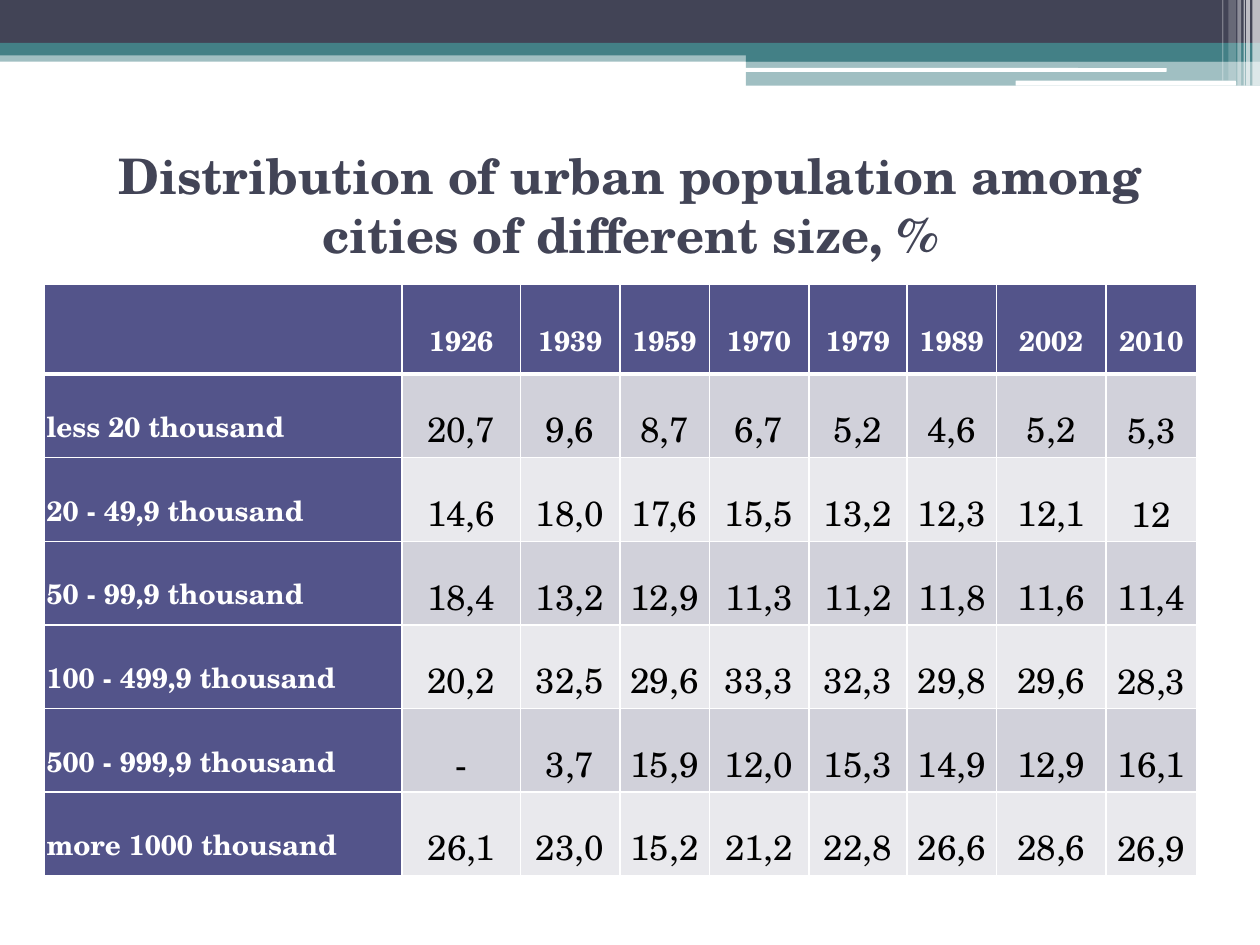
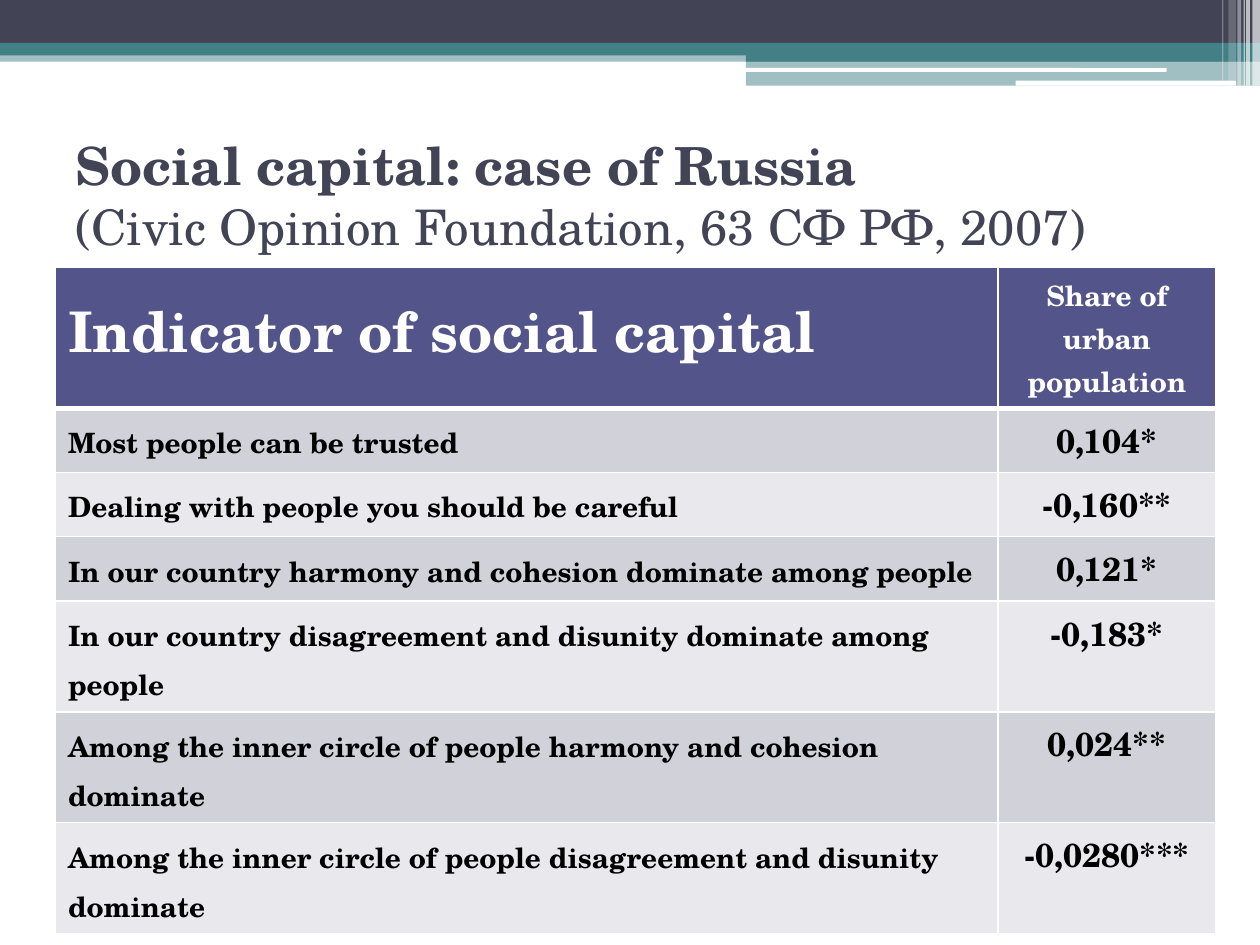
"""Builds two slides of tables on urban population and social capital."""
from dataclasses import dataclass
from typing import NamedTuple

from lxml.etree import SubElement
from pptx import Presentation
from pptx.dml.color import RGBColor
from pptx.enum.shapes import MSO_SHAPE as Shape
from pptx.enum.text import MSO_ANCHOR as Anchor, PP_ALIGN as Align
from pptx.oxml.ns import qn
from pptx.util import Inches, Pt


@dataclass(frozen=True)
class Theme:
    font: str = "TeX Gyre Schola"
    white: str = "FFFFFF"
    black: str = "000000"
    slate: str = "424456"
    teal: str = "438086"
    indigo: str = "53548A"
    stripes: tuple = ("D1D1DA", "E9E9ED")
    title: int = 28
    lead: int = 30
    heading: int = 32
    label: int = 16
    number: int = 20
    score: int = 19
    thin: int = 1
    thick: int = 3


T = Theme()


class Band(NamedTuple):
    left: float
    top: float
    width: float
    height: float
    color: str
    alpha: int = 100
    kind: Shape = Shape.RECTANGLE


class Span(NamedTuple):
    text: str
    size: int
    bold: bool = True


class CellStyle(NamedTuple):
    size: int
    color: str
    bold: bool = True
    align: Align = Align.LEFT
    anchor: Anchor = Anchor.TOP
    spacing: float = 1.0
    after: int = 0
    margins: tuple = (0.1, 0.05)


class TableSpec(NamedTuple):
    left: float
    top: float
    widths: list
    heights: list
    rows: list


BANDS = [
    Band(0, 0.4, 10, 0.09, T.teal, 50),
    Band(0, 0, 10, 0.34, T.slate),
    Band(0, 0.34, 10, 0.1, T.teal),
    Band(5.92, 0.39, 4.08, 0.1, T.teal),
    Band(5.92, 0.48, 4.08, 0.2, T.teal, 50),
    Band(5.91, 0.54, 3.35, 0.03, T.white, kind=Shape.ROUNDED_RECTANGLE),
    Band(8.06, 0.64, 1.75, 0.04, T.white, kind=Shape.ROUNDED_RECTANGLE),
    Band(9.94, 0, 0.06, 0.68, T.white, 65),
    Band(9.89, 0, 0.03, 0.68, T.white, 65),
    Band(9.87, 0, 0.01, 0.68, T.white, 60),
    Band(9.82, 0, 0.03, 0.68, T.white, 40),
    Band(9.75, 0, 0.06, 0.64, T.white, 20),
    Band(9.7, 0, 0.01, 0.64, T.white, 30),
]

CITY_LABEL = CellStyle(T.label, T.white, anchor=Anchor.MIDDLE, spacing=1.5, margins=(0.02, 0.02))
CITY_YEAR = CITY_LABEL._replace(align=Align.CENTER)
CITY_SHARE = CITY_YEAR._replace(size=T.number, color=T.black, bold=False)
CITY_LAST = CITY_SHARE._replace(anchor=Anchor.BOTTOM)
INDICATOR = CellStyle(T.label, T.black, spacing=1.15, after=6)
INDICATOR_HEAD = INDICATOR._replace(size=T.heading, color=T.white)
SCORE = CellStyle(T.score, T.black, align=Align.CENTER)
SCORE_HEAD = SCORE._replace(size=T.label, color=T.white)

CITIES = TableSpec(
    0.35, 2.26,
    [2.84, 0.94, 0.79, 0.71, 0.79, 0.78, 0.71, 0.87, 0.72],
    [0.71] + [(4.69 - 0.71) / 6] * 6,
    [
        ["", "1926", "1939", "1959", "1970", "1979", "1989", "2002", "2010"],
        ["less 20 thousand", "20,7", "9,6", "8,7", "6,7", "5,2", "4,6", "5,2", "5,3"],
        ["20 - 49,9 thousand", "14,6", "18,0", "17,6", "15,5", "13,2", "12,3", "12,1", "12"],
        ["50 - 99,9 thousand", "18,4", "13,2", "12,9", "11,3", "11,2", "11,8", "11,6", "11,4"],
        ["100 - 499,9 thousand", "20,2", "32,5", "29,6", "33,3", "32,3", "29,8", "29,6", "28,3"],
        ["500 - 999,9 thousand", "-", "3,7", "15,9", "12,0", "15,3", "14,9", "12,9", "16,1"],
        ["more 1000 thousand", "26,1", "23,0", "15,2", "21,2", "22,8", "26,6", "28,6", "26,9"],
    ],
)

CAPITAL = TableSpec(
    0.44, 2.12,
    [7.48, 1.73],
    [1.12] + [0.51] * 3 + [0.88] * 3,
    [
        ["Indicator of social capital", "Share of urban population"],
        ["Most people can be trusted", "0,104*"],
        ["Dealing with people you should be careful", "-0,160**"],
        ["In our country harmony and cohesion dominate among people", "0,121*"],
        ["In our country disagreement and disunity dominate among people", "-0,183*"],
        ["Among the inner circle of people harmony and cohesion dominate", "0,024**"],
        ["Among the inner circle of people disagreement and disunity dominate", "-0,0280***"],
    ],
)


def assign(target, values: dict) -> None:
    for name, value in values.items():
        setattr(target, name, value)


def set_font(r, size: int, color: str, bold: bool) -> None:
    assign(r.font, {"name": T.font, "size": Pt(size), "bold": bold})
    r.font.color.rgb = RGBColor.from_string(color)


def fill_solid(fill, color: str) -> None:
    fill.solid()
    fill.fore_color.rgb = RGBColor.from_string(color)


def draw_band(s, band: Band) -> None:
    sp = s.shapes.add_shape(band.kind, *map(Inches, band[:4]))
    sp.shadow.inherit = False
    sp.line.fill.background()
    fill_solid(sp.fill, band.color)
    if band.alpha < 100:
        color = sp._element.spPr.find(qn("a:solidFill"))[0]
        SubElement(color, qn("a:alpha"), val=str(band.alpha * 1000))


def draw_title(s, top: float, align: Align, lines: list[Span]) -> None:
    sp = s.shapes.add_textbox(Inches(0.5), Inches(top), Inches(9), Inches(1.1))
    tf = sp.text_frame
    assign(tf, {"word_wrap": True, "vertical_anchor": Anchor.MIDDLE})
    p = tf.paragraphs[0]
    p.alignment = align
    for i, span in enumerate(lines):
        if i:
            p.add_line_break()
        r = p.add_run()
        r.text = span.text
        set_font(r, span.size, T.slate, span.bold)


def set_borders(cell, top: int, bottom: int) -> None:
    tcPr = cell._tc.get_or_add_tcPr()
    widths = {"lnL": T.thin, "lnR": T.thin, "lnT": top, "lnB": bottom}
    for tag, width in widths.items():
        ln = SubElement(tcPr, qn(f"a:{tag}"), w=str(Pt(width)))
        SubElement(SubElement(ln, qn("a:solidFill")), qn("a:srgbClr"), val=T.white)


def write_cell(cell, text: str, style: CellStyle) -> None:
    side, edge = map(Inches, style.margins)
    assign(cell, {
        "margin_left": side, "margin_right": side,
        "margin_top": edge, "margin_bottom": edge,
        "vertical_anchor": style.anchor,
    })
    p = cell.text_frame.paragraphs[0]
    assign(p, {"alignment": style.align, "line_spacing": style.spacing,
               "space_after": Pt(style.after)})
    if text:
        r = p.add_run()
        r.text = text
        set_font(r, style.size, style.color, style.bold)


def city_style(row: int, col: int) -> CellStyle:
    if col == 0:
        return CITY_LABEL
    if row == 0:
        return CITY_YEAR
    return CITY_LAST if col == len(CITIES.widths) - 1 else CITY_SHARE


def capital_style(row: int, col: int) -> CellStyle:
    if row == 0:
        return (INDICATOR_HEAD, SCORE_HEAD)[col]
    return (INDICATOR, SCORE)[col]


def draw_table(s, spec: TableSpec, style_at) -> None:
    box = (spec.left, spec.top, sum(spec.widths), sum(spec.heights))
    table = s.shapes.add_table(len(spec.heights), len(spec.widths), *map(Inches, box)).table
    for column, width in zip(table.columns, spec.widths):
        column.width = Inches(width)
    for i, (row, height) in enumerate(zip(table.rows, spec.heights)):
        row.height = Inches(height)
        for j, cell in enumerate(row.cells):
            style = style_at(i, j)
            set_borders(cell, T.thick if i == 1 else T.thin, T.thick if i == 0 else T.thin)
            fill_solid(cell.fill, T.indigo if style.color == T.white else T.stripes[(i - 1) % 2])
            write_cell(cell, spec.rows[i][j], style)


def add_slide(prs):
    s = prs.slides.add_slide(prs.slide_layouts[6])
    for band in BANDS:
        draw_band(s, band)
    return s


def main() -> None:
    prs = Presentation()
    assign(prs, {"slide_width": Inches(10), "slide_height": Inches(7.5)})

    s = add_slide(prs)
    draw_title(s, 1.07, Align.CENTER, [
        Span("Distribution of urban population among cities of different size, %", T.title),
    ])
    draw_table(s, CITIES, city_style)

    s = add_slide(prs)
    draw_title(s, 0.99, Align.LEFT, [
        Span("Social capital: case of Russia ", T.lead),
        Span("(Civic Opinion Foundation, 63 СФ РФ, 2007)", T.title, False),
    ])
    draw_table(s, CAPITAL, capital_style)

    prs.save("out.pptx")


if __name__ == "__main__":
    main()
